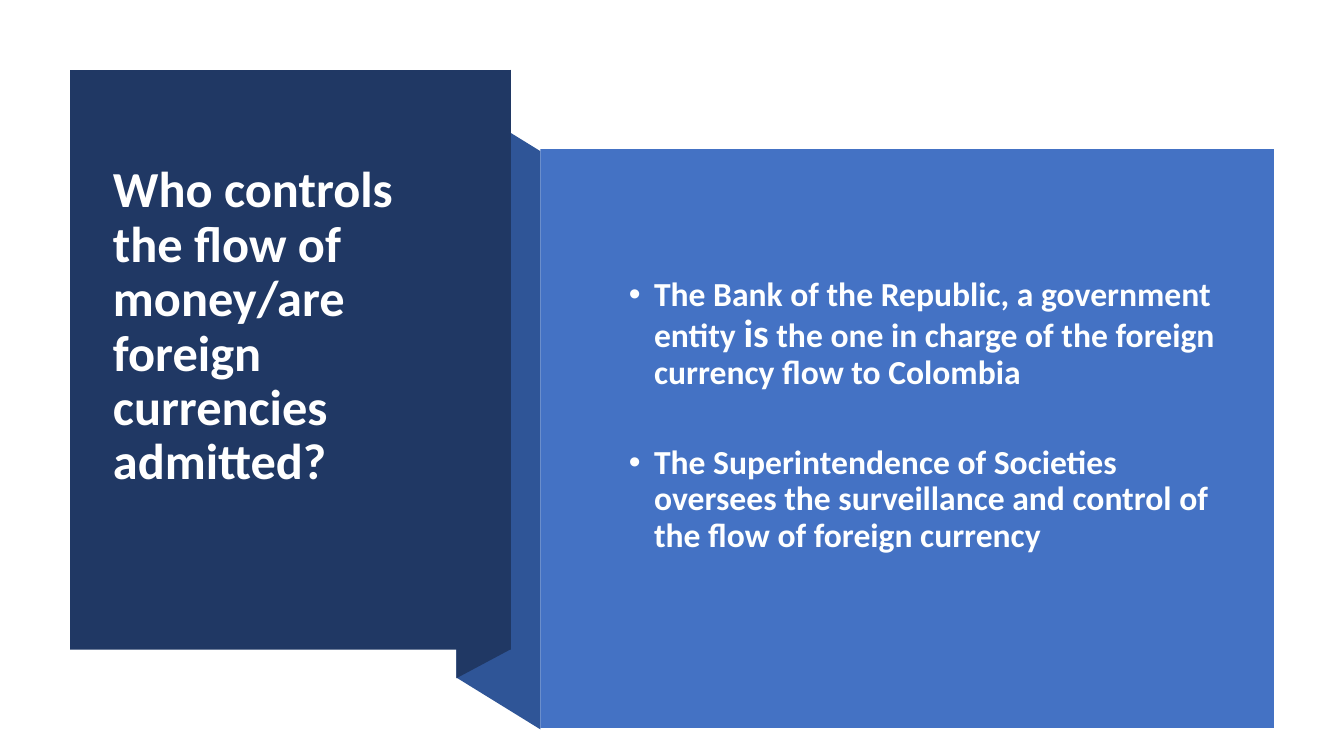
from lxml.etree import SubElement
from pptx import Presentation
from pptx.dml.color import RGBColor
from pptx.enum.shapes import MSO_SHAPE
from pptx.enum.text import MSO_ANCHOR, MSO_AUTO_SIZE, PP_ALIGN
from pptx.oxml.ns import qn
from pptx.util import Pt


def color(hex_value):
    return RGBColor.from_string(hex_value)


class SlideBuilder:
    font = "Calibri"
    white = "FFFFFF"
    navy = "203864"
    fold = "2F5597"
    blue = "4472C4"

    def __init__(self, prs):
        self.s = prs.slides.add_slide(prs.slide_layouts[1])
        fill = self.s.background.fill
        fill.solid()
        fill.fore_color.rgb = color(self.white)

    def paint(self, sp, fill):
        sp.shadow.inherit = False
        sp.fill.solid()
        sp.fill.fore_color.rgb = color(fill)
        sp.line.fill.background()

    def panel(self, left, top, width, height, fill):
        sp = self.s.shapes.add_shape(
            MSO_SHAPE.RECTANGLE, Pt(left), Pt(top), Pt(width), Pt(height))
        self.paint(sp, fill)

    def polygon(self, points, fill):
        corners = [(Pt(x), Pt(y)) for x, y in points]
        builder = self.s.shapes.build_freeform(*corners[0])
        builder.add_line_segments(corners[1:], close=True)
        self.paint(builder.convert_to_shape(), fill)

    def text(self, sp, left, top, width, height, paragraphs, ink, gap=6, bullet=False):
        self.s.shapes._spTree.append(sp._element)
        sp.left, sp.top, sp.width, sp.height = Pt(left), Pt(top), Pt(width), Pt(height)
        tf = sp.text_frame
        tf.word_wrap = True
        tf.auto_size = MSO_AUTO_SIZE.NONE
        tf.vertical_anchor = MSO_ANCHOR.MIDDLE
        for i, runs in enumerate(paragraphs):
            p = tf.add_paragraph() if i else tf.paragraphs[0]
            p.alignment = PP_ALIGN.LEFT
            p.line_spacing = 0.9
            p.space_before = Pt(0)
            p.space_after = Pt(gap if i < len(paragraphs) - 1 else 6)
            if bullet:
                pPr = p._p.get_or_add_pPr()
                pPr.set("marL", str(Pt(36)))
                pPr.set("indent", str(Pt(-18)))
                SubElement(pPr, qn("a:buFont"), typeface="Arial")
                SubElement(pPr, qn("a:buChar"), char="•")
            for words, size in runs:
                r = p.add_run()
                r.text = words
                r.font.name = self.font
                r.font.size = Pt(size)
                r.font.bold = True
                r.font.color.rgb = color(ink)


def main():
    prs = Presentation()
    prs.slide_width, prs.slide_height = Pt(960), Pt(540)
    b = SlideBuilder(prs)

    b.polygon([(386, 521), (326, 484), (326, 71), (386, 108)], b.fold)
    b.polygon([(364.5, 464), (326, 484.5), (326, 70.5), (364.5, 50)], b.navy)
    b.panel(50, 50, 315, 414, b.navy)
    b.panel(386, 106.5, 524, 413.5, b.blue)

    b.text(b.s.shapes.title, 73.5, 77, 267, 314, [
        [("Who controls the flow of money/are foreign currencies admitted?", 36)],
    ], b.white)
    b.text(b.s.placeholders[1], 424, 142.5, 469, 309, [
        [("The Bank of the Republic, a government entity ", 24), ("is", 28),
         (" the one in charge of the foreign currency flow to Colombia", 24)],
        [("The Superintendence of Societies oversees the surveillance "
          "and control of the flow of foreign currency", 24)],
    ], "FEFFFF", gap=38, bullet=True)

    prs.save("out.pptx")


if __name__ == "__main__":
    main()
